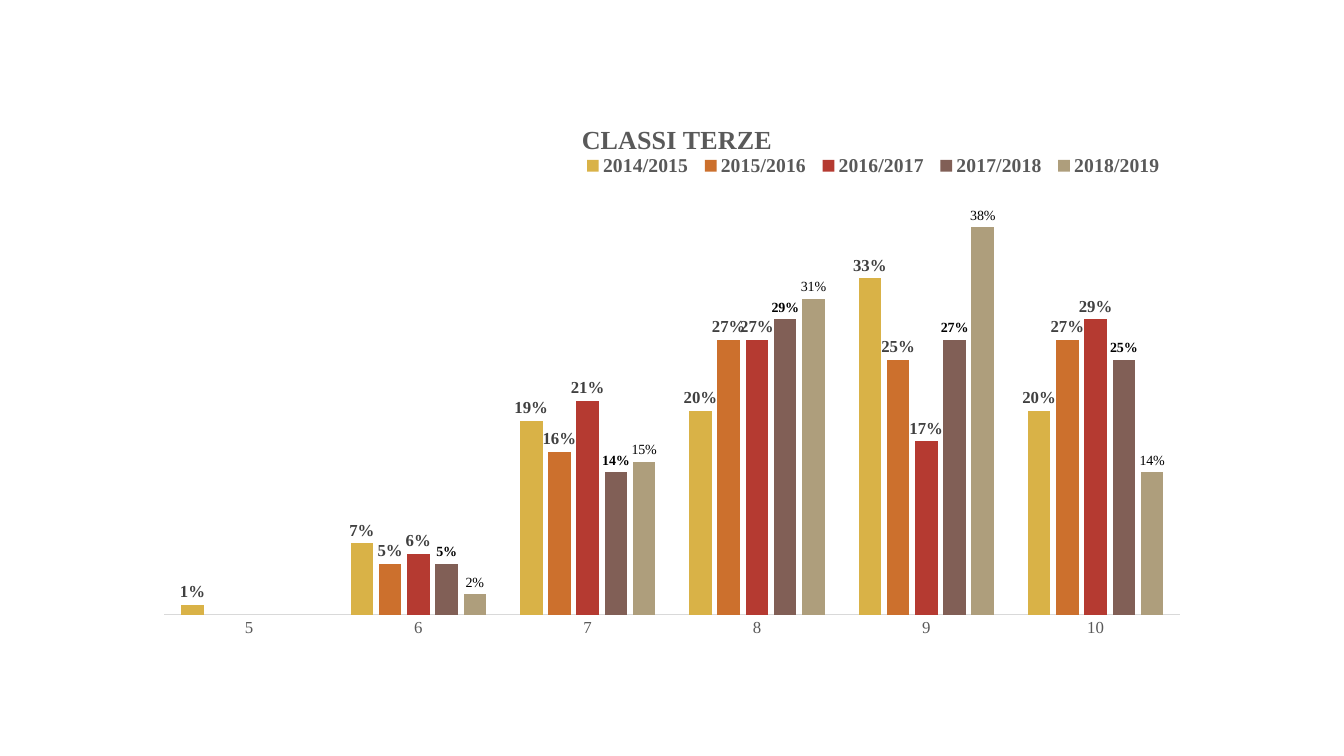
from dataclasses import dataclass
from typing import Optional

import lxml.etree
import pptx
import pptx.chart.data
import pptx.dml.color
import pptx.enum.chart
import pptx.oxml.ns
import pptx.util

FACE = "Times New Roman"
HUES = {
    "gold": "D9B247", "orange": "CC702D", "red": "B53A31",
    "brown": "815F56", "sand": "AE9E7C",
    "grey": "595959", "dark": "404040", "black": "000000", "line": "D9D9D9",
}
MARKS = ["5", "6", "7", "8", "9", "10"]


@dataclass
class Year:
    name: str
    hue: str
    shares: list[Optional[float]]
    size: float = 12
    ink: str = "dark"
    bold: bool = True


YEARS = [
    Year("2014/2015", "gold", [0.01, 0.07, 0.19, 0.2, 0.33, 0.2]),
    Year("2015/2016", "orange", [None, 0.05, 0.16, 0.27, 0.25, 0.27]),
    Year("2016/2017", "red", [None, 0.06, 0.21, 0.27, 0.17, 0.29]),
    Year("2017/2018", "brown", [None, 0.05, 0.14, 0.29, 0.27, 0.25], 10, "black"),
    Year("2018/2019", "sand", [None, 0.02, 0.15, 0.31, 0.38, 0.14], 10, "black", False),
]


def tint(name: str) -> pptx.dml.color.RGBColor:
    return pptx.dml.color.RGBColor.from_string(HUES[name])


def style(font, size: float = 12, ink: str = "grey", bold: bool = False) -> None:
    font.name = FACE
    font.size = pptx.util.Pt(size)
    font.bold = bold
    font.color.rgb = tint(ink)


def write(frame, text: str, **format) -> None:
    frame.text = text
    style(frame.paragraphs[0].runs[0].font, **format)


def place(part, index: int, **spots) -> None:
    """Set a chart part's manual layout, in fractions of the chart, as child number index."""
    name = pptx.oxml.ns.qn
    for old in part.findall(name("c:layout")):
        part.remove(old)
    layout = lxml.etree.Element(name("c:layout"))
    manual = lxml.etree.SubElement(layout, name("c:manualLayout"))
    if "plotArea" in part.tag:
        lxml.etree.SubElement(manual, name("c:layoutTarget")).set("val", "inner")
    for side in ("x", "y"):
        lxml.etree.SubElement(manual, name(f"c:{side}Mode")).set("val", "edge")
    for side, share in spots.items():
        lxml.etree.SubElement(manual, name(f"c:{side}")).set("val", str(share))
    part.insert(index, layout)


def add_bars(slide):
    data = pptx.chart.data.CategoryChartData(number_format="0%")
    data.categories = MARKS
    for year in YEARS:
        data.add_series(year.name, year.shares)
    chart = slide.shapes.add_chart(
        pptx.enum.chart.XL_CHART_TYPE.COLUMN_CLUSTERED,
        pptx.util.Cm(3.61), pptx.util.Cm(2.44),
        pptx.util.Cm(26.67), pptx.util.Cm(13.89), data,
    ).chart
    style(chart.font, size=10, ink="black")
    plot = chart.plots[0]
    plot.vary_by_categories = False
    plot.gap_width = 150
    plot.overlap = -25
    for year, bars in zip(YEARS, plot.series):
        bars.format.fill.solid()
        bars.format.fill.fore_color.rgb = tint(year.hue)
        bars.invert_if_negative = False
        labels = bars.data_labels
        labels.show_value = True
        labels.number_format = "0%"
        labels.number_format_is_linked = False
        labels.position = pptx.enum.chart.XL_LABEL_POSITION.OUTSIDE_END
        style(labels.font, size=year.size, ink=year.ink, bold=year.bold)
    return chart


def set_axes(chart) -> None:
    base = chart.category_axis
    base.major_tick_mark = pptx.enum.chart.XL_TICK_MARK.NONE
    base.format.line.color.rgb = tint("line")
    base.format.line.width = pptx.util.Pt(0.75)
    style(base.tick_labels.font)
    scale = chart.value_axis
    scale.minimum_scale = 0
    scale.maximum_scale = 0.4
    scale.has_major_gridlines = False
    scale.tick_labels.number_format = "0%"
    scale.tick_labels.number_format_is_linked = False
    scale.visible = False


def set_heads(chart) -> None:
    """Add the title and the legend, and lay out the parts of the chart."""
    chart.has_title = True
    write(chart.chart_title.text_frame, "CLASSI TERZE", size=18.6, bold=True)
    chart.has_legend = True
    legend = chart.legend
    legend.position = pptx.enum.chart.XL_LEGEND_POSITION.TOP
    legend.include_in_layout = False
    style(legend.font, size=14, bold=True)
    area = chart.plots[0]._element.getparent()
    place(area, 0, x=0.02, y=0.2, w=0.96, h=0.74)
    place(chart.chart_title._element, 1, x=0.41, y=0.04)
    place(legend._element, 1, x=0.41, y=0.1, w=0.56, h=0.05)


def main() -> None:
    deck = pptx.Presentation()
    deck.slide_width = pptx.util.Cm(33.87)
    deck.slide_height = pptx.util.Cm(19.05)
    slide = deck.slides.add_slide(deck.slide_layouts[6])
    chart = add_bars(slide)
    set_axes(chart)
    set_heads(chart)
    deck.save("out.pptx")


if __name__ == "__main__":
    main()
